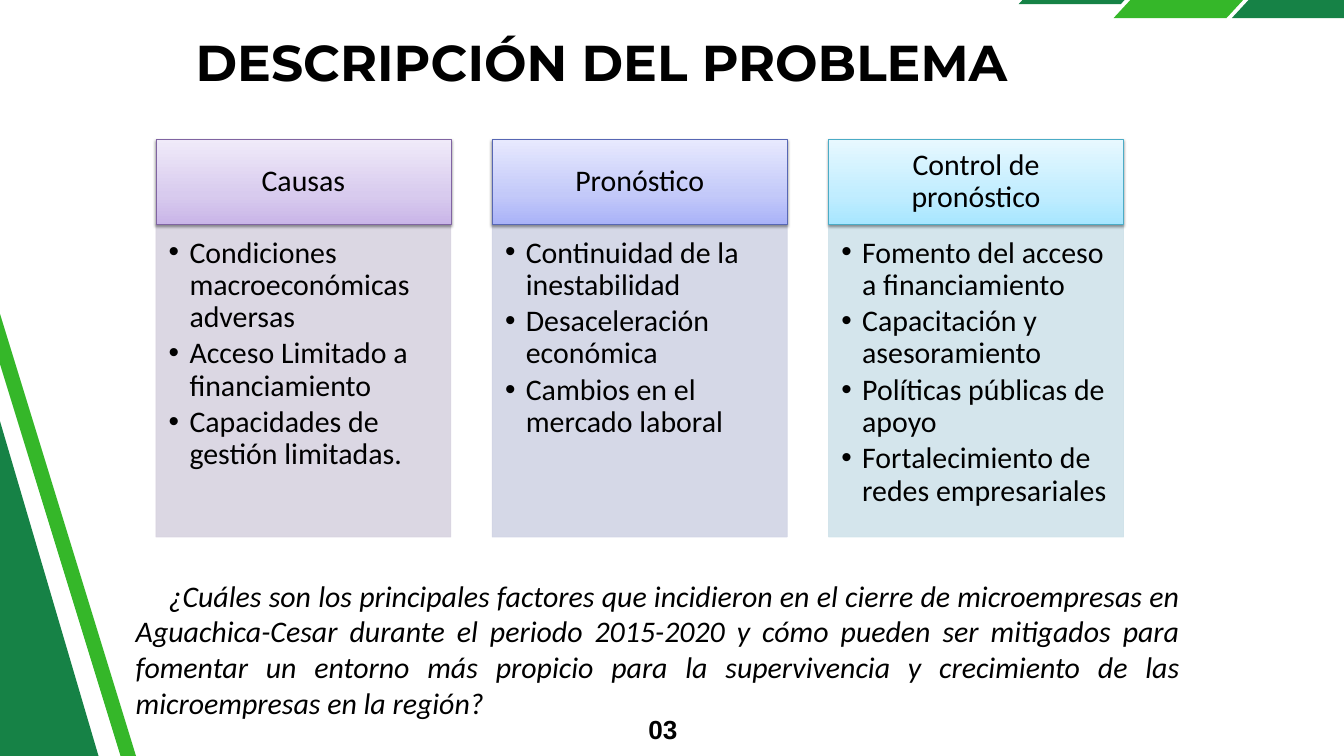
import pptx
import pptx.util
import pptx.oxml
import pptx.oxml.ns
import pptx.dml.color
import pptx.enum.shapes
import pptx.enum.text

Inches, Pt = pptx.util.Inches, pptx.util.Pt
ALIGN = pptx.enum.text.PP_ALIGN
ANCHOR = pptx.enum.text.MSO_ANCHOR
NAMESPACE = pptx.oxml.ns.nsdecls("a")

WIDTH, HEIGHT = 20, 11.25
TITLE = "DESCRIPCIÓN DEL PROBLEMA"
QUESTION = (
    "¿Cuáles son los principales factores que incidieron en el cierre de microempresas en "
    "Aguachica-Cesar durante el periodo 2015-2020 y cómo pueden ser mitigados para fomentar "
    "un entorno más propicio para la supervivencia y crecimiento de las microempresas en la región?"
)
PAGE_NUMBER = "03"
COLUMNS = [
    {"header": "Causas", "gradient": ("C9B5E8", "D8CBEE", "F0EAF9"),
     "line": "8064A2", "fill": "D8D3E0", "placeholder": 1,
     "items": ["Condiciones macroeconómicas adversas",
               "Acceso Limitado a financiamiento",
               "Capacidades de gestión limitadas."]},
    {"header": "Pronóstico", "gradient": ("A9B2F8", "C3C9F9", "E7E9FE"),
     "line": "5767B4", "fill": "D1D4E5", "placeholder": 2,
     "items": ["Continuidad de la inestabilidad",
               "Desaceleración económica",
               "Cambios en el mercado laboral"]},
    {"header": "Control de pronóstico", "gradient": ("A7E6FF", "C1EDFF", "E7F8FF"),
     "line": "4BACC6", "fill": "D0E3EA", "placeholder": 4,
     "items": ["Fomento del acceso a financiamiento",
               "Capacitación y asesoramiento",
               "Políticas públicas de apoyo",
               "Fortalecimiento de redes empresariales"]},
]
QUESTION_PLACEHOLDER = 3
GRADIENT_STOPS = (0, 35, 100)
DARK_GREEN, LIGHT_GREEN = "168246", "35B729"
BANDS = [
    (15.16, -0.86, 2.37, 0.92, 0.85, 0, DARK_GREEN),
    (16.57, -1.06, 2.91, 1.33, 1.23, 0, LIGHT_GREEN),
    (18.33, -1.06, 2.91, 1.33, 1.23, 0, DARK_GREEN),
    (-10.09, 6.23, 16.41, 5.01, 0, 253.6, DARK_GREEN),
    (-7.08, 8.59, 16.41, 0.22, 0, 252.9, LIGHT_GREEN),
]
GRID_LEFT, GRID_TOP, COLUMN_STEP, COLUMN_WIDTH = 2.32, 2.08, 5.005, 4.39
HEADER_HEIGHT, LIST_HEIGHT = 1.26, 4.65


def color(value):
    return pptx.dml.color.RGBColor.from_string(value)


def place(shape, left, top, width, height):
    shape.left, shape.top = Inches(left), Inches(top)
    shape.width, shape.height = Inches(width), Inches(height)


def set_frame(shape, insets, anchor=ANCHOR.TOP):
    frame = shape.text_frame
    frame.word_wrap = True
    frame.auto_size = pptx.enum.text.MSO_AUTO_SIZE.NONE
    frame.vertical_anchor = anchor
    frame.margin_left, frame.margin_top, frame.margin_right, frame.margin_bottom = map(Inches, insets)
    return frame


def format_para(para, align, size=32, name="Calibri", bold=False, italic=False, spacing=1.0, after=0):
    para.alignment = align
    para.line_spacing = spacing
    para.space_before, para.space_after = Pt(0), Pt(after)
    for span in para.runs:
        span.font.size, span.font.name = Pt(size), name
        span.font.bold, span.font.italic = bold, italic
        span.font.color.rgb = color("000000")


def set_indent(para, margin, indent, bullet=None):
    properties = para._p.get_or_add_pPr()
    properties.set("marL", str(Inches(margin)))
    properties.set("indent", str(Inches(indent)))
    tag = f'a:buChar {NAMESPACE} char="{bullet}"' if bullet else f"a:buNone {NAMESPACE}"
    properties.append(pptx.oxml.parse_xml(f"<{tag}/>"))


def add_band(page, left, top, width, height, slant, rotation, fill):
    corners = [(left + slant, top), (left + width, top),
               (left + width - slant, top + height), (left, top + height)]
    points = [(Inches(x), Inches(y)) for x, y in corners]
    builder = page.shapes.build_freeform(*points[0])
    builder.add_line_segments(points[1:], close=True)
    band = builder.convert_to_shape()
    band.rotation = rotation
    band.shadow.inherit = False
    band.fill.solid()
    band.fill.fore_color.rgb = color(fill)
    band.line.fill.background()


def add_header(page, column, left):
    header = page.shapes.add_shape(
        pptx.enum.shapes.MSO_SHAPE.RECTANGLE, Inches(left), Inches(GRID_TOP),
        Inches(COLUMN_WIDTH), Inches(HEADER_HEIGHT))
    stops = "".join(
        f'<a:gs pos="{stop * 1000}"><a:srgbClr val="{value}"/></a:gs>'
        for stop, value in zip(GRADIENT_STOPS, column["gradient"]))
    properties = header._element.spPr
    properties.insert(2, pptx.oxml.parse_xml(
        f'<a:gradFill {NAMESPACE} rotWithShape="1"><a:gsLst>{stops}</a:gsLst>'
        '<a:lin ang="16200000" scaled="0"/></a:gradFill>'))
    header.line.color.rgb = color(column["line"])
    header.line.width = Pt(0.75)
    header.shadow.inherit = False
    properties.find(pptx.oxml.ns.qn("a:effectLst")).append(pptx.oxml.parse_xml(
        f'<a:outerShdw {NAMESPACE} blurRad="{Pt(3.1)}" dist="{Pt(1.6)}" dir="5400000" rotWithShape="0">'
        '<a:srgbClr val="000000"><a:alpha val="38000"/></a:srgbClr></a:outerShdw>'))
    frame = set_frame(header, (0.25, 0.14, 0.25, 0.14), ANCHOR.MIDDLE)
    frame.text = column["header"]
    format_para(frame.paragraphs[0], ALIGN.CENTER, spacing=0.9)


def fill_list(body, column, left):
    place(body, left, GRID_TOP + HEADER_HEIGHT, COLUMN_WIDTH, LIST_HEIGHT)
    body.fill.solid()
    body.fill.fore_color.rgb = color(column["fill"])
    body.line.color.rgb = color(column["fill"])
    body.line.width = Pt(0.75)
    for paint in body._element.spPr.iter(pptx.oxml.ns.qn("a:srgbClr")):
        paint.append(pptx.oxml.parse_xml(f'<a:alpha {NAMESPACE} val="90000"/>'))
    frame = set_frame(body, (0.19, 0.19, 0.25, 0.28))
    frame.text = "\n".join(column["items"])
    for para in frame.paragraphs:
        set_indent(para, 0.31, -0.31, "•")
        format_para(para, ALIGN.LEFT, spacing=0.9, after=4.3)


def main():
    deck = pptx.Presentation()
    deck.slide_width, deck.slide_height = Inches(WIDTH), Inches(HEIGHT)
    page = deck.slides.add_slide(deck.slide_layouts.get_by_name("Comparison"))
    bodies = {body.placeholder_format.idx: body for body in page.placeholders}

    for band in BANDS:
        add_band(page, *band)

    title = page.shapes.title
    place(title, 2.07, 0.46, 13.76, 0.91)
    frame = set_frame(title, (0, 0, 0, 0))
    frame.text = TITLE
    format_para(frame.paragraphs[0], ALIGN.CENTER, 54, "Montserrat", bold=True)

    for index, column in enumerate(COLUMNS):
        left = GRID_LEFT + index * COLUMN_STEP
        fill_list(bodies[column["placeholder"]], column, left)
        add_header(page, column, left)

    question = bodies[QUESTION_PLACEHOLDER]
    place(question, 1.92, 8.54, 15.75, 2.26)
    frame = set_frame(question, (0.1, 0.05, 0.1, 0.05))
    frame.text = QUESTION
    set_indent(frame.paragraphs[0], 0, 0.49)
    format_para(frame.paragraphs[0], ALIGN.JUSTIFY, italic=True)

    number = page.shapes.add_textbox(Inches(9.52), Inches(10.54), Inches(0.56), Inches(0.5))
    frame = set_frame(number, (0, 0, 0, 0))
    frame.text = PAGE_NUMBER
    format_para(frame.paragraphs[0], ALIGN.RIGHT, 28, "Arial", bold=True, spacing=Pt(39.2))

    deck.save("out.pptx")


if __name__ == "__main__":
    main()
